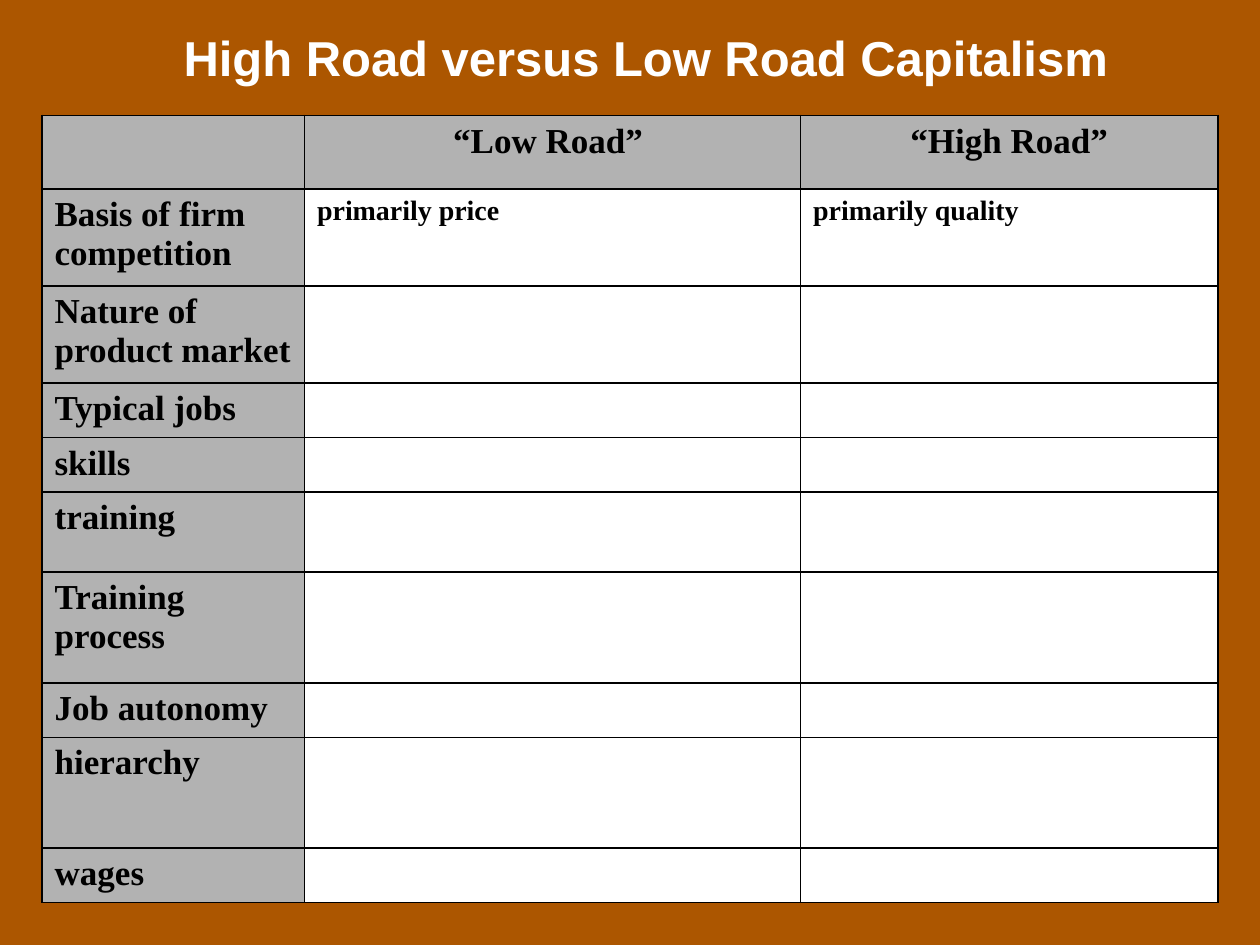
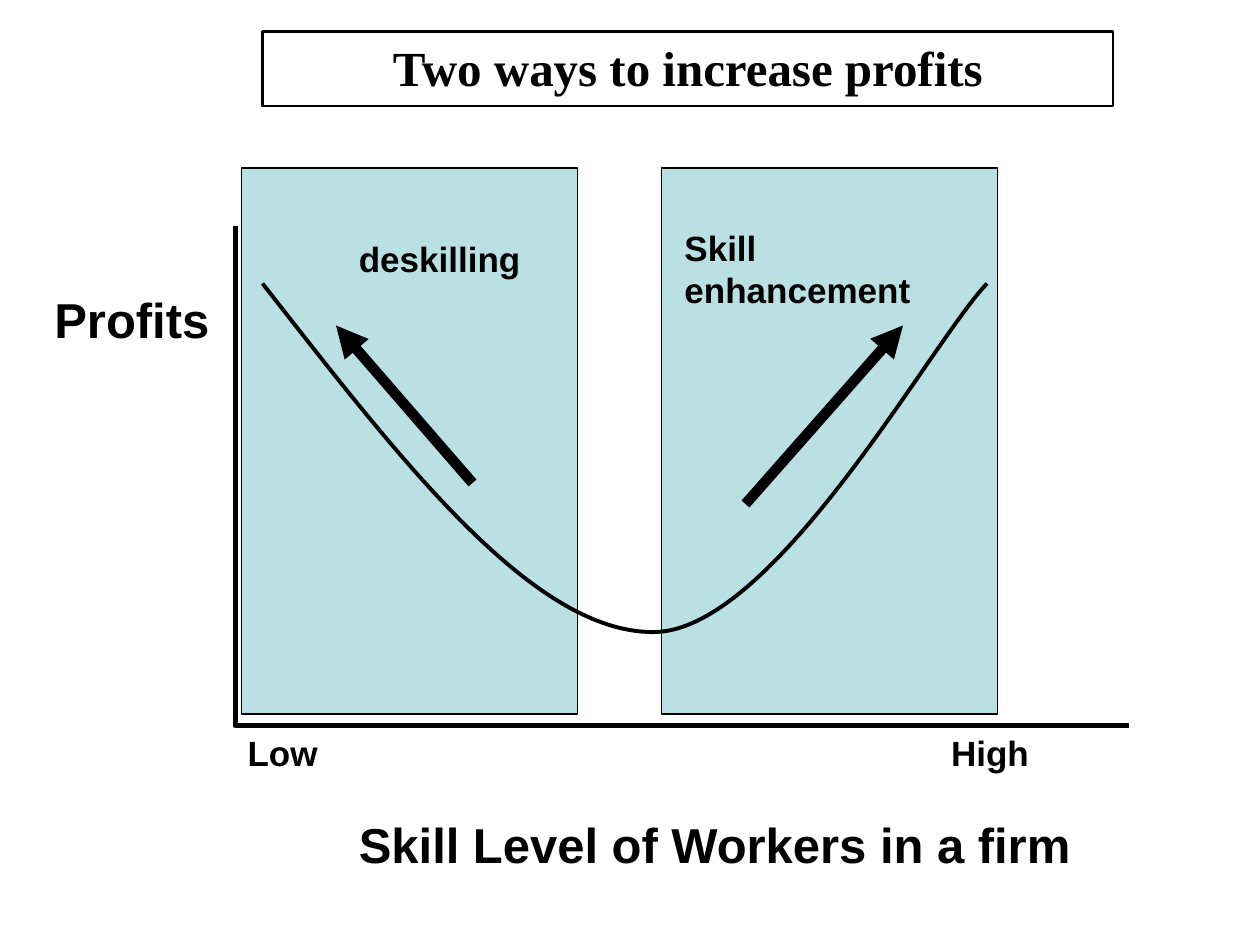
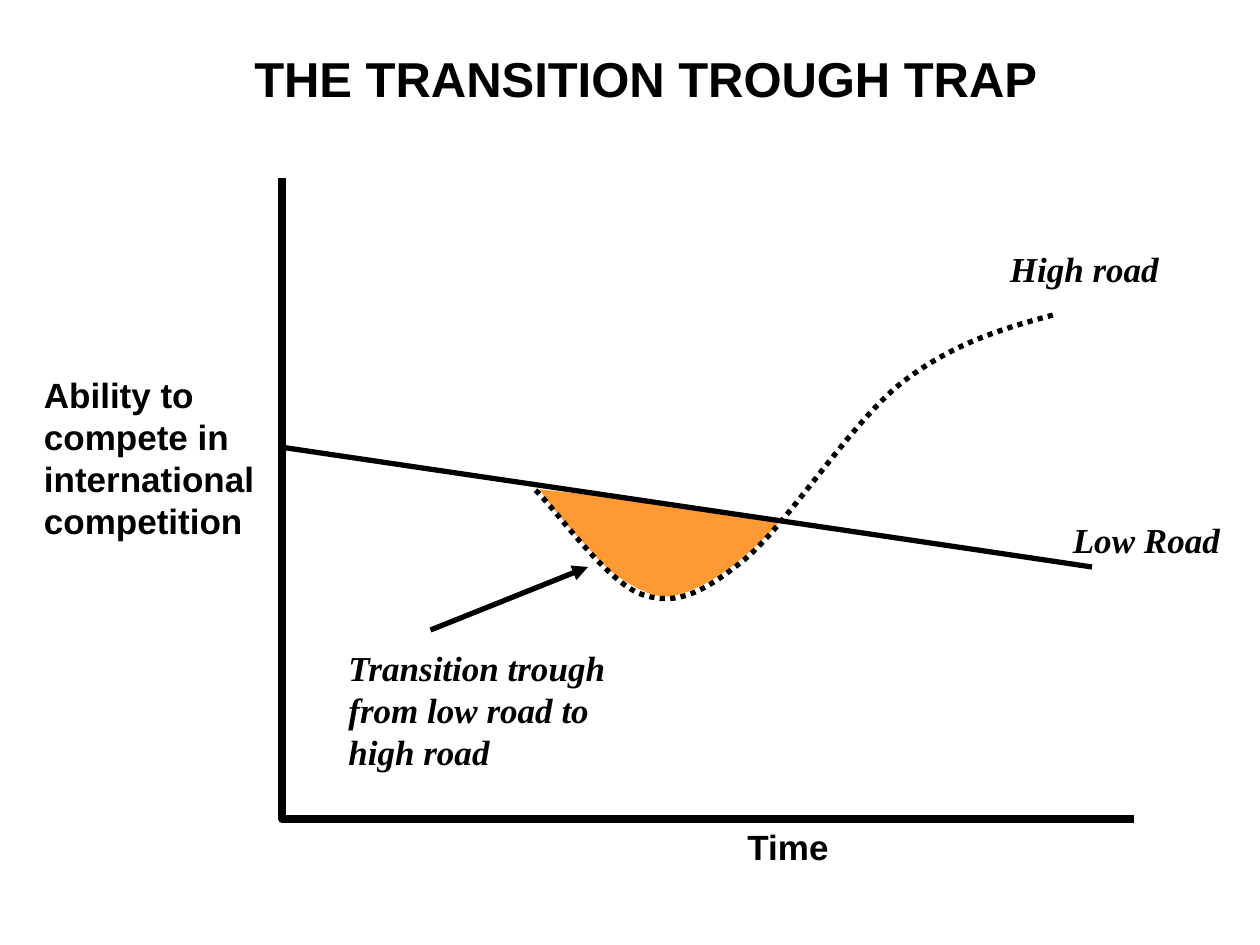
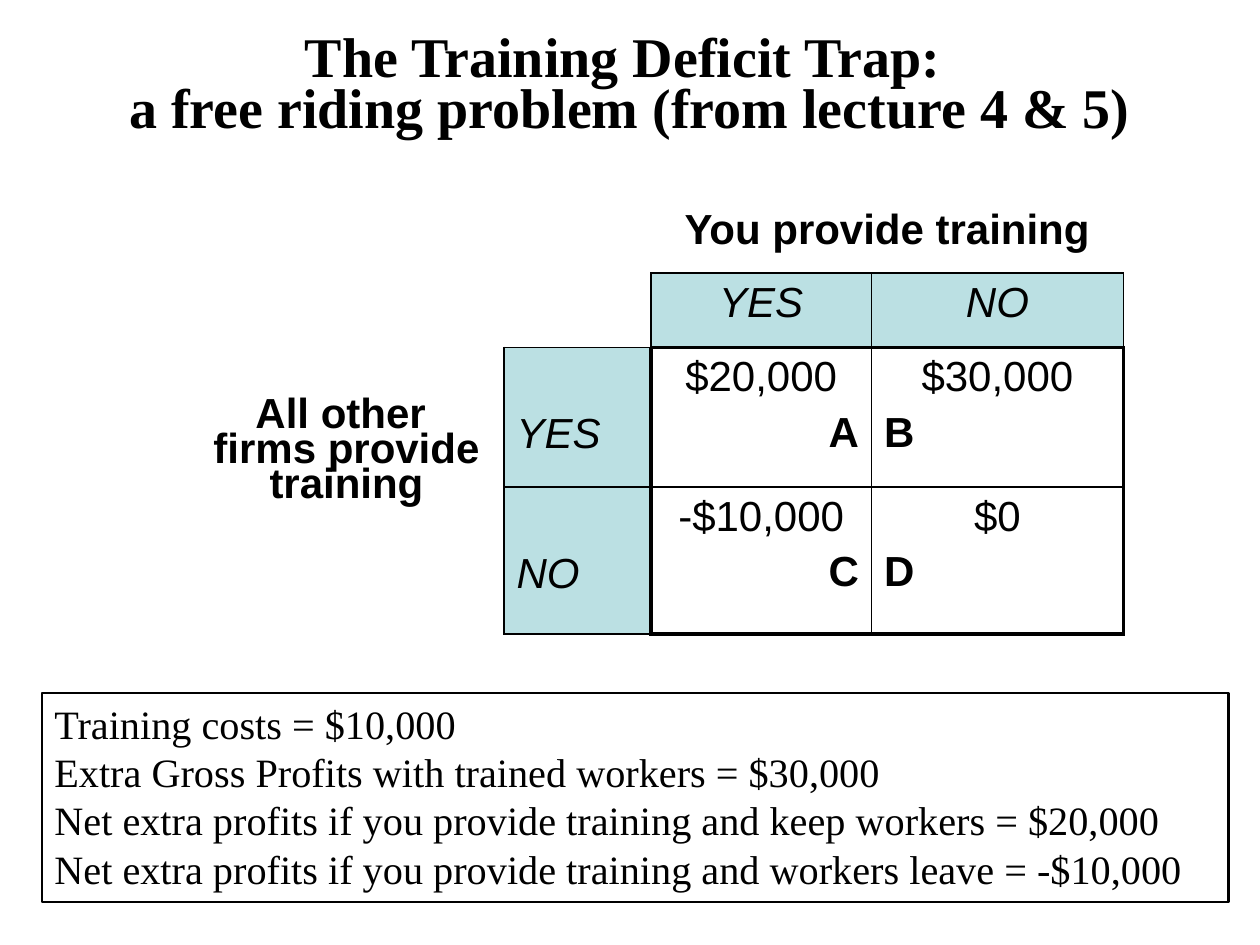
from lxml import etree
from pptx import Presentation
from pptx import util as u
from pptx.dml import color
from pptx.enum import dml, shapes, text
from pptx.oxml import ns


class Theme:
    black = color.RGBColor.from_string("000000")
    white = color.RGBColor.from_string("FFFFFF")
    rust = color.RGBColor.from_string("AC5600")
    gray = color.RGBColor.from_string("B2B2B2")
    teal = color.RGBColor.from_string("BBE0E3")
    orange = color.RGBColor.from_string("FF9933")
    sans, serif = "Arial", "Times New Roman"
    headline, title, payoff, note, label, body = 32, 28, 24, 23, 20, 16
    thin, rule, frame, curve, heavy, axis, arrow = 0.75, 1, 1.5, 2.25, 3, 4.5, 6
    tight = 0.75
    no_style = "{2D5ABB26-0587-4C30-8999-92F81FD0307C}"


T = Theme
LEFT, CENTER, RIGHT = text.PP_ALIGN.LEFT, text.PP_ALIGN.CENTER, text.PP_ALIGN.RIGHT

# Slide size and a square grid of 120 columns by 90 rows
prs = Presentation()
prs.slide_width, prs.slide_height = u.Inches(10), u.Inches(7.5)
G = prs.slide_width / 120


def write(host, txt, box=None, fill=None, line=None, font=T.sans, size=T.label,
          ink=T.black, bold=True, italic=False, align=LEFT, spacing=None, gap=0):
    """Write txt into a text frame, or into a new box on a slide when box is given."""
    tf = host
    if box:
        at = [round(v * G) for v in box]
        if fill or line:
            sp = host.shapes.add_shape(shapes.MSO_SHAPE.RECTANGLE, *at)
            sp.shadow.inherit = False
            sp.fill.background()
            sp.line.fill.background()
            if fill:
                sp.fill.solid()
                sp.fill.fore_color.rgb = fill
            if line:
                sp.line.color.rgb, sp.line.width = T.black, u.Pt(line)
        else:
            sp = host.shapes.add_textbox(*at)
        tf = sp.text_frame
        tf.word_wrap, tf.vertical_anchor = True, text.MSO_ANCHOR.TOP
    for row in txt.split("\n"):
        p = tf.add_paragraph() if tf.text else tf.paragraphs[0]
        p.alignment = align
        if spacing:
            p.line_spacing = spacing
        if gap:
            p.space_before = u.Pt(gap)
        if row:
            r = p.add_run()
            r.text = row
            r.font.name, r.font.size, r.font.color.rgb = font, u.Pt(size), ink
            r.font.bold, r.font.italic = bold, italic


def outline(s, points, width=None, fill=None, curved=False, dash=None):
    """Join grid points; when curved, each three after the first make a Bezier."""
    pts = [(round(x * G), round(y * G)) for x, y in points]
    fb = s.shapes.build_freeform(*pts[0])
    fb.add_line_segments(pts[1:], close=bool(fill))
    sp = fb.convert_to_shape()
    sp.shadow.inherit = False
    if fill:
        sp.fill.solid()
        sp.fill.fore_color.rgb = fill
    else:
        sp.fill.background()
    if width:
        sp.line.color.rgb, sp.line.width = T.black, u.Pt(width)
    else:
        sp.line.fill.background()
    if dash:
        sp.line.dash_style = dash
    if curved:
        steps = list(sp._element.iter(ns.qn("a:lnTo")))
        for i in range(0, len(pts) - 1, 3):
            bez = etree.Element(ns.qn("a:cubicBezTo"))
            steps[i].addprevious(bez)
            for step in steps[i:i + 3]:
                bez.append(step[0])
                step.getparent().remove(step)


# Slides with their backgrounds
compare, profits, trough, training = slides = [
    prs.slides.add_slide(prs.slide_layouts[6]) for _ in range(4)]
for s, ground in zip(slides, (T.rust, T.white, T.white, T.white)):
    s.background.fill.solid()
    s.background.fill.fore_color.rgb = ground

# Both tables: empty grids with column widths and row heights
grids = []
for s, left, top, cols, rows in (
        (compare, 4, 11, (25, 47.25, 39.75),
         (7, 9.25, 9.25, 5.2, 5.2, 7.6, 10.55, 5.2, 10.55, 5.2)),
        (training, 18, 0, (22, 8, 14, 21, 24), (20, 6, 7.1, 13.3, 14))):
    at = [round(v * G) for v in (left, top, sum(cols), sum(rows))]
    tbl = s.shapes.add_table(len(rows), len(cols), *at).table
    tbl.first_row = tbl.horz_banding = False
    tbl._tbl.tblPr.find(ns.qn("a:tableStyleId")).text = T.no_style
    for col, w in zip(tbl.columns, cols):
        col.width = round(w * G)
    for row, h in zip(tbl.rows, rows):
        row.height = round(h * G)
    grids.append(tbl)
roads, payoffs = grids
borders = []

# Slide 1: comparison table
entries = [
    ("", "“Low Road” ", "“High Road”"),
    ("Basis of firm competition", "primarily price", "primarily quality"),
    ("Nature of product market",), ("Typical jobs",), ("skills",), ("training",),
    ("Training\nprocess",), ("Job autonomy",), ("hierarchy",), ("wages",)]
for i, row in enumerate(entries):
    for j in range(3):
        cell = roads.cell(i, j)
        head = i == 0 or j == 0
        cell.fill.solid()
        cell.fill.fore_color.rgb = T.gray if head else T.white
        borders.append((cell, dict.fromkeys("LRTB", T.rule)))
        if j < len(row):
            write(cell.text_frame, row[j], font=T.serif, align=LEFT if i else CENTER,
                  size=T.label if head else T.body)
write(compare, "High Road versus Low Road Capitalism", (15, 2, 93, 6.8),
      size=T.title, ink=T.white, align=CENTER)

# Slide 2: two shaded panels, the profit curve and its axes
write(profits, "Profits", (4, 27, 24, 8.9), T.white, size=T.title)
for left in (63, 23):
    write(profits, "", (left, 16, 32, 52), T.teal, T.thin)
outline(profits, [(25, 27), (38, 43.6), (50.6, 60.2), (62.2, 60.2),
                  (73.7, 60.2), (88.7, 32.5), (94, 27)], T.curve, curved=True)
write(profits, "Skill Level of Workers in a firm", (33, 77, 72, 8.9), T.white, size=T.title)
for txt, left in (("Low", 22.4), ("High", 89.4)):
    write(profits, txt, (left, 69.1, 12.8, 8.9), T.white)
outline(profits, [(22.4, 21.5), (22.4, 69.1), (107.5, 69.1)], T.heavy)
write(profits, "Two ways to increase profits", (25, 3, 81, 7.1), line=T.frame,
      font=T.serif, size=T.title, align=CENTER)
write(profits, "deskilling", (33, 22, 18, 8.9))
write(profits, "Skill enhancement", (64, 21, 26, 8.9))

# Slide 3: labels, axes, the shaded trough and the two roads
for txt, box, fill, road in (
        ("Low Road", (101, 48.8, 18.6, 8.5), None, True),
        ("High road", (95, 23, 19, 8.5), T.white, True),
        ("Ability to compete in international competition", (3, 35, 24.6, 22), T.white, False),
        ("Time", (70, 78, 24.6, 8.5), T.white, False),
        ("Transition trough from low road to high road", (32, 61, 28, 14), T.white, True)):
    write(trough, txt, box, fill, font=T.serif if road else T.sans, italic=road)
outline(trough, [(26.9, 17), (26.9, 78), (108, 78)], T.axis)
outline(trough, [(51.4, 46.6), (58.8, 47.4), (67.2, 48.4), (74.4, 49.4),
                 (73.8, 50.5), (70.1, 53.9), (68, 55.1),
                 (66.5, 56), (64.8, 56.8), (63.4, 56.8),
                 (61.9, 56.8), (60.6, 56), (59.3, 55.2),
                 (58, 54.4), (56.9, 53.2), (55.6, 51.7),
                 (54.2, 50.3), (51.8, 47.4), (51.4, 46.6)], fill=T.orange, curved=True)
outline(trough, [(26.9, 42.6), (39.7, 44.5), (88, 51.6), (104, 54)], T.heavy, curved=True)
outline(trough, [(51, 46.7), (52.7, 48.2), (57.7, 55.4), (61.1, 56.6),
                 (64.3, 57.7), (66.8, 56.6), (70.9, 53.3),
                 (75, 49.9), (80.8, 40.6), (85.7, 36.6),
                 (90.5, 32.8), (95.4, 31.3), (100.3, 30)],
        T.heavy, curved=True, dash=dml.MSO_LINE.ROUND_DOT)
write(trough, "THE TRANSITION TROUGH TRAP", (8, 4, 107, 6.8), size=T.title, align=CENTER)

# Slide 4: payoff table with merged margins
for first, last in (((0, 0), (0, 4)), ((1, 1), (1, 2)), ((1, 3), (1, 4)),
                    ((2, 0), (2, 2)), ((3, 0), (4, 1))):
    payoffs.cell(*first).merge(payoffs.cell(*last))
for (i, j), txt in (((1, 3), "You provide training"),
                    ((3, 0), "All other \nfirms provide training")):
    write(payoffs.cell(i, j).text_frame, txt, size=T.payoff, align=CENTER, spacing=T.tight)
payoffs.cell(3, 0).margin_top = u.Inches(0.42)

answers = {(2, 3): "YES", (2, 4): "NO", (3, 2): "YES", (4, 2): "NO"}
amounts = {(3, 3): ("$20,000", "A"), (3, 4): ("$30,000", "B"),
           (4, 3): ("-$10,000", "C"), (4, 4): ("$0", "D")}
for (i, j), txt in answers.items():
    cell = payoffs.cell(i, j)
    cell.fill.solid()
    cell.fill.fore_color.rgb = T.teal
    if j == 2:
        cell.margin_top = u.Inches(0.5)
    write(cell.text_frame, txt, size=T.payoff, bold=False, italic=True,
          align=LEFT if j == 2 else CENTER)
for (i, j), (amount, letter) in amounts.items():
    tf = payoffs.cell(i, j).text_frame
    write(tf, amount, size=T.payoff, bold=False, align=CENTER)
    write(tf, letter, size=T.payoff, align=RIGHT if j == 3 else LEFT, gap=5)

# Heavy rules surround the four amounts
for i, j in [*answers, *amounts]:
    heavy = {"L": i > 2 and j == 3, "R": i > 2 and j in (2, 4),
             "T": j > 2 and i == 3, "B": j > 2 and i in (2, 4)}
    borders.append((payoffs.cell(i, j),
                    {side: T.curve if on else T.rule for side, on in heavy.items()}))
borders.append((payoffs.cell(1, 3), {"B": T.rule}))

write(training, "The Training Deficit Trap: \na free riding problem (from lecture 4 & 5)",
      (3, 3, 114, 10.8), font=T.serif, size=T.headline, align=CENTER, spacing=T.tight)
write(training, "Training costs = $10,000\n"
      "Extra Gross Profits with trained workers = $30,000\n"
      "Net extra profits if you provide training and keep workers = $20,000\n"
      "Net extra profits if you provide training and workers leave = -$10,000",
      (4, 66, 113, 19.9), line=T.frame, font=T.serif, size=T.note, bold=False)

# Cell borders
for cell, sides in borders:
    props = cell._tc.get_or_add_tcPr()
    for k, (side, width) in enumerate(sides.items()):
        ln = etree.Element(ns.qn("a:ln" + side), w=str(u.Pt(width)))
        solid = etree.SubElement(ln, ns.qn("a:solidFill"))
        etree.SubElement(solid, ns.qn("a:srgbClr"), val=str(T.black))
        props.insert(k, ln)

# Arrows
for s, ends, width in ((profits, (45, 46, 32, 31), T.arrow),
                       (profits, (71, 48, 86, 31), T.arrow),
                       (trough, (41, 60, 56, 54), T.heavy)):
    sp = s.shapes.add_connector(shapes.MSO_CONNECTOR.STRAIGHT, *[round(v * G) for v in ends])
    sp.line.color.rgb, sp.line.width = T.black, u.Pt(width)
    props = sp._element.spPr
    etree.SubElement(props.find(ns.qn("a:ln")), ns.qn("a:tailEnd"), type="triangle")
    etree.SubElement(props, ns.qn("a:effectLst"))

prs.save("out.pptx")
